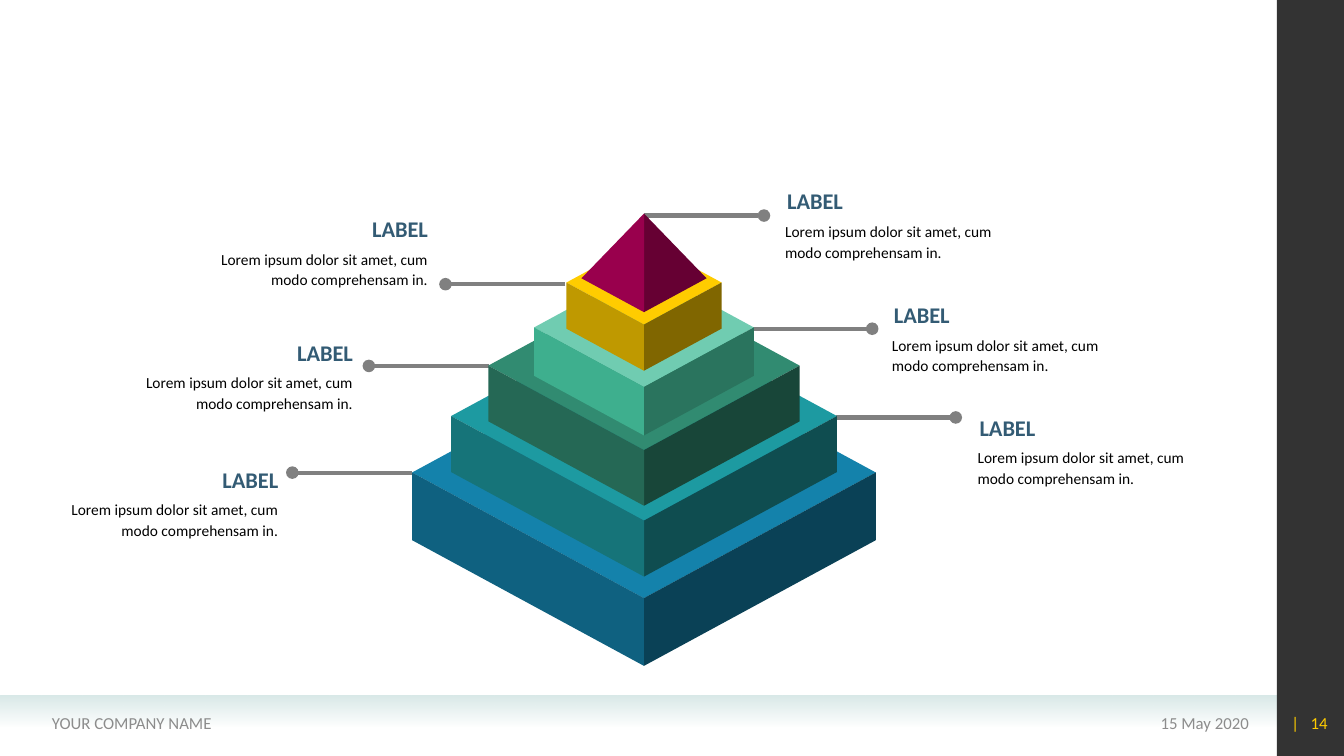
from pptx import Presentation
from pptx.dml.color import RGBColor
from pptx.enum.shapes import MSO_CONNECTOR, MSO_SHAPE
from pptx.enum.text import MSO_ANCHOR, PP_ALIGN
from pptx.oxml.ns import qn
from pptx.util import Pt
from lxml.etree import SubElement

BLACK = RGBColor(0x00, 0x00, 0x00)
MIST = RGBColor(0xD9, 0xE9, 0xE8)
FOOTER_GRAY = RGBColor(0x8C, 0x8C, 0x8C)
LEADER_GRAY = RGBColor(0x80, 0x80, 0x80)
GOLD = RGBColor(0xFF, 0xCC, 0x00)
SLATE = RGBColor(0x33, 0x5B, 0x74)
APEX_DARK = RGBColor(0x66, 0x00, 0x33)
APEX_LIGHT = RGBColor(0x99, 0x00, 0x4D)

BLURB = "Lorem ipsum dolor sit amet, cum modo comprehensam in."
CENTER_X = 460
SLOPE = 0.542  # depth of a tier's top per point of half width
LEADER_LENGTH = 85.7
LABEL_WIDTH, BLURB_WIDTH = 63.4, 182.9

# Tiers from the base up: half width, corner y, wall height, top, right, left
TIERS = [
    (165.6, 337.5, 48.4, RGBColor(0x14, 0x82, 0xAB),
     RGBColor(0x0A, 0x41, 0x56), RGBColor(0x0F, 0x61, 0x80)),
    (137.8, 297.2, 40, RGBColor(0x1D, 0x9A, 0xA1),
     RGBColor(0x0F, 0x4D, 0x50), RGBColor(0x16, 0x74, 0x79)),
    (111.2, 261.2, 39.8, RGBColor(0x31, 0x8B, 0x71),
     RGBColor(0x18, 0x46, 0x39), RGBColor(0x25, 0x68, 0x55)),
    (78.5, 233.9, 34.6, RGBColor(0x70, 0xCC, 0xB1),
     RGBColor(0x2A, 0x74, 0x5E), RGBColor(0x3E, 0xAF, 0x8E)),
    (55.4, 201.8, 33, GOLD,
     RGBColor(0x80, 0x66, 0x00), RGBColor(0xBF, 0x99, 0x00)),
]

# Callouts: direction, leader x, leader y, inner text edge, label top
CALLOUTS = [
    (1, 460, 154, 553.7, 130.3),
    (1, 537.3, 234.8, 630, 211.4),
    (1, 597, 298.2, 691.2, 291.8),
    (-1, 294.5, 337.6, 205.9, 329),
    (-1, 349.2, 261.4, 259.2, 238.2),
    (-1, 403.9, 203, 312.8, 149.9),
]

presentation = Presentation()
presentation.slide_width, presentation.slide_height = Pt(960), Pt(540)
slide = presentation.slides.add_slide(presentation.slide_layouts[6])
shapes = slide.shapes


def add_text(left, top, width, height, words, size, color, align,
             anchor=MSO_ANCHOR.MIDDLE, bold=False, wrap=True):
    """Place one paragraph and return it."""
    frame = shapes.add_textbox(Pt(left), Pt(top), Pt(width), Pt(height)).text_frame
    frame.word_wrap = wrap
    frame.vertical_anchor = anchor
    paragraph = frame.paragraphs[0]
    paragraph.alignment = align
    for word in words:
        run = paragraph.add_run()
        run.text = word
        run.font.name = "Calibri"
        run.font.size = Pt(size)
        run.font.bold = bold
        run.font.color.rgb = color
    return paragraph


def add_face(corners, color):
    """Draw one flat polygon of the pyramid."""
    points = [(Pt(x), Pt(y)) for x, y in corners]
    builder = shapes.build_freeform(*points[0], scale=1.0)
    builder.add_line_segments(points[1:], close=True)
    face = builder.convert_to_shape()
    face.fill.solid()
    face.fill.fore_color.rgb = color
    face.line.fill.background()
    face.shadow.inherit = False


# Footer band and sidebar
band = shapes.add_shape(MSO_SHAPE.RECTANGLE, 0, Pt(496.6), Pt(912), Pt(22.5))
band.fill.gradient()
band.fill.gradient_angle = 270
for stop in band.fill.gradient_stops:
    stop.color.rgb = MIST
sidebar = shapes.add_shape(MSO_SHAPE.RECTANGLE, Pt(912), 0, Pt(48), Pt(540))
sidebar.fill.solid()
sidebar.fill.fore_color.rgb = BLACK
for strip, opacity in ((band, 0), (sidebar, 80000)):
    strip.line.fill.background()
    strip.shadow.inherit = False
    last_color = list(strip.element.iter(qn("a:srgbClr")))[-1]
    SubElement(last_color, qn("a:alpha"), val=str(opacity))

# Footer text
add_text(655.2, 502, 244, 28.8, ["15 May 2020"], 12, FOOTER_GRAY, PP_ALIGN.RIGHT)
add_text(30, 502, 353, 28.8, ["YOUR COMPANY NAME"], 12, FOOTER_GRAY, PP_ALIGN.LEFT)
page_number = add_text(907.2, 502, 48.2, 28.8, ["|", " ", "14"], 12, GOLD,
                       PP_ALIGN.RIGHT)
page_number.runs[1].font._element.set("spc", "540")  # widen the gap

# Leader lines
for direction, x, y, _, _ in CALLOUTS:
    leader = shapes.add_connector(MSO_CONNECTOR.STRAIGHT, Pt(x), Pt(y),
                                  Pt(x + direction * LEADER_LENGTH), Pt(y))
    leader.line.color.rgb = LEADER_GRAY
    leader.line.width = Pt(3)
    SubElement(leader.line._get_or_add_ln(), qn("a:tailEnd"), type="oval")
    SubElement(leader.element.spPr, qn("a:effectLst"))

# Pyramid tiers
for half, corner_y, wall, top_color, right_color, left_color in TIERS:
    depth = half * SLOPE
    front_y = corner_y + depth
    add_face([(CENTER_X, corner_y - depth), (CENTER_X + half, corner_y),
              (CENTER_X, front_y), (CENTER_X - half, corner_y)], top_color)
    for side, color in ((half, right_color), (-half, left_color)):
        add_face([(CENTER_X, front_y + wall), (CENTER_X + side, corner_y + wall),
                  (CENTER_X + side, corner_y), (CENTER_X, front_y)], color)

# Pyramid apex
for side, color in ((44.7, APEX_DARK), (-44.7, APEX_LIGHT)):
    add_face([(CENTER_X, 152.6), (CENTER_X + side, 198.8), (CENTER_X, 223)], color)

# Callout texts
for direction, _, _, edge, label_top in CALLOUTS:
    if direction > 0:
        align, label_left, blurb_left = PP_ALIGN.LEFT, edge + 1.4, edge
    else:
        align = PP_ALIGN.RIGHT
        label_left, blurb_left = edge - LABEL_WIDTH, edge - BLURB_WIDTH
    blurb = add_text(blurb_left, label_top + 23.5, BLURB_WIDTH, 36, [BLURB], 11,
                     BLACK, align, anchor=MSO_ANCHOR.TOP)
    blurb.line_spacing = Pt(14.7)
    blurb.space_before = Pt(2.2)
    add_text(label_left, label_top, LABEL_WIDTH, 26.6, ["LABEL"], 16, SLATE, align,
             bold=True, wrap=False)

presentation.save("out.pptx")
